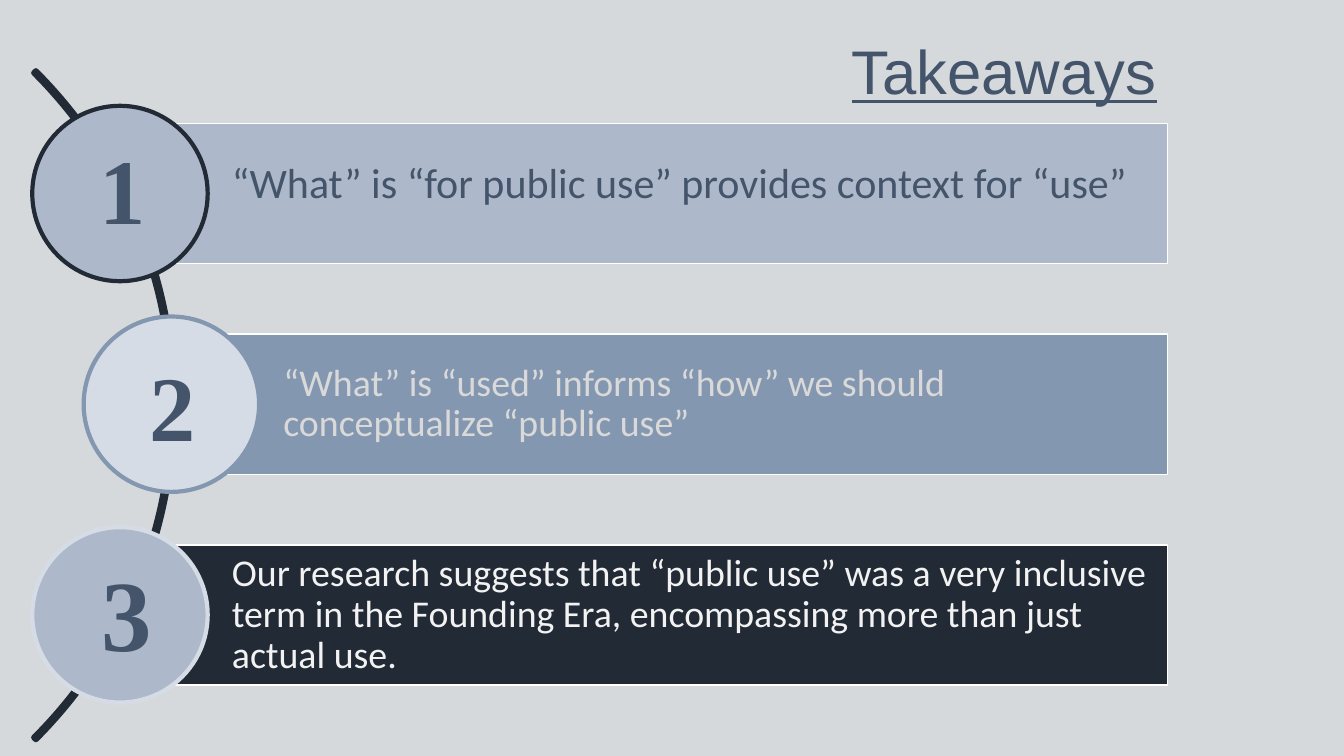
from pptx import Presentation
from pptx import util as u
from pptx.dml.color import RGBColor
from pptx.enum import shapes, text

COLORS = {
    "background": "D6D9DC", "ink": "222A35", "heading": "44546A",
    "mist": "ADB9CA", "steel": "8497B0", "pale": "D6DCE5",
    "white": "FFFFFF", "silver": "D9D9D9", "light": "F2F2F2",
}
BAR_RIGHT, BAR_HEIGHT, BADGE = 11.58, 1.39, 1.74
FIRST_CENTER, ROW_PITCH = 1.92, 2.09

deck = Presentation()
deck.slide_width, deck.slide_height = u.Inches(13.33), u.Inches(7.5)
slide = deck.slides.add_slide(deck.slide_layouts[6])
slide.background.fill.solid()
slide.background.fill.fore_color.rgb = RGBColor.from_string(COLORS["background"])


def add_figure(kind, box, fill, line, width):
    figure = slide.shapes.add_shape(kind, *map(u.Inches, box))
    figure.shadow.inherit = False
    if fill:
        figure.fill.solid()
        figure.fill.fore_color.rgb = RGBColor.from_string(COLORS[fill])
    else:
        figure.fill.background()
    figure.line.color.rgb = RGBColor.from_string(COLORS[line])
    figure.line.width = u.Pt(width)
    return figure


def write(holder, words, size, font, color, align=text.PP_ALIGN.LEFT):
    frame = holder.text_frame
    frame.word_wrap = True
    frame.text = words
    paragraph = frame.paragraphs[0]
    paragraph.alignment = align
    style = paragraph.runs[0].font
    style.size, style.name = u.Pt(size), font
    style.color.rgb = RGBColor.from_string(COLORS[color])
    return paragraph


arc = add_figure(shapes.MSO_SHAPE.BLOCK_ARC, (-7.65, -0.67, 9.38, 9.38), None, "ink", 4)
for index, value in enumerate((189, 27, 0.003)):
    arc.adjustments[index] = value

takeaways = [
    ("“What” is “for public use” provides context for “use”",
     1.19, 30, 1, 0.3, "mist", "heading", "mist", "ink", (0.89, 1.26, 1.21), 66),
    ("“What” is “used” informs “how” we should conceptualize “public use”",
     1.7, 27, 0.9, 0.07, "steel", "silver", "pale", "steel", (1.38, 3.41, 1.21), 66),
    ("Our research suggests that “public use” was a very inclusive term in the "
     "Founding Era, encompassing more than just actual use.",
     1.19, 27, 0.9, 0.07, "ink", "light", "mist", "pale", (0.91, 5.41, 1.31), 72),
]

for row, (words, left, size, spacing, bottom, bar_fill, ink, badge_fill, ring,
          (number_left, number_top, number_height), number_size) in enumerate(takeaways):
    center = FIRST_CENTER + row * ROW_PITCH
    bar = add_figure(shapes.MSO_SHAPE.RECTANGLE,
                     (left, center - BAR_HEIGHT / 2, BAR_RIGHT - left, BAR_HEIGHT),
                     bar_fill, "white", 1)
    write(bar, words, size, "Calibri", ink).line_spacing = spacing
    frame = bar.text_frame
    frame.vertical_anchor = text.MSO_ANCHOR.MIDDLE
    frame.margin_left, frame.margin_right = u.Inches(1.11), u.Inches(0.07)
    frame.margin_top, frame.margin_bottom = u.Inches(0.07), u.Inches(bottom)
    add_figure(shapes.MSO_SHAPE.OVAL,
               (left - BADGE / 2, center - BADGE / 2, BADGE, BADGE), badge_fill, ring, 3)
    number = slide.shapes.add_textbox(
        *map(u.Inches, (number_left, number_top, 0.64, number_height)))
    digit = write(number, str(row + 1), number_size, "Times New Roman", "heading")
    digit.runs[0].font.bold = True

title = slide.shapes.add_textbox(*map(u.Inches, (5.13, 0.28, 6.44, 0.84)))
heading = write(title, "Takeaways", 44, "Arial", "heading", text.PP_ALIGN.RIGHT)
heading.runs[0].font.underline = True

deck.save("out.pptx")
